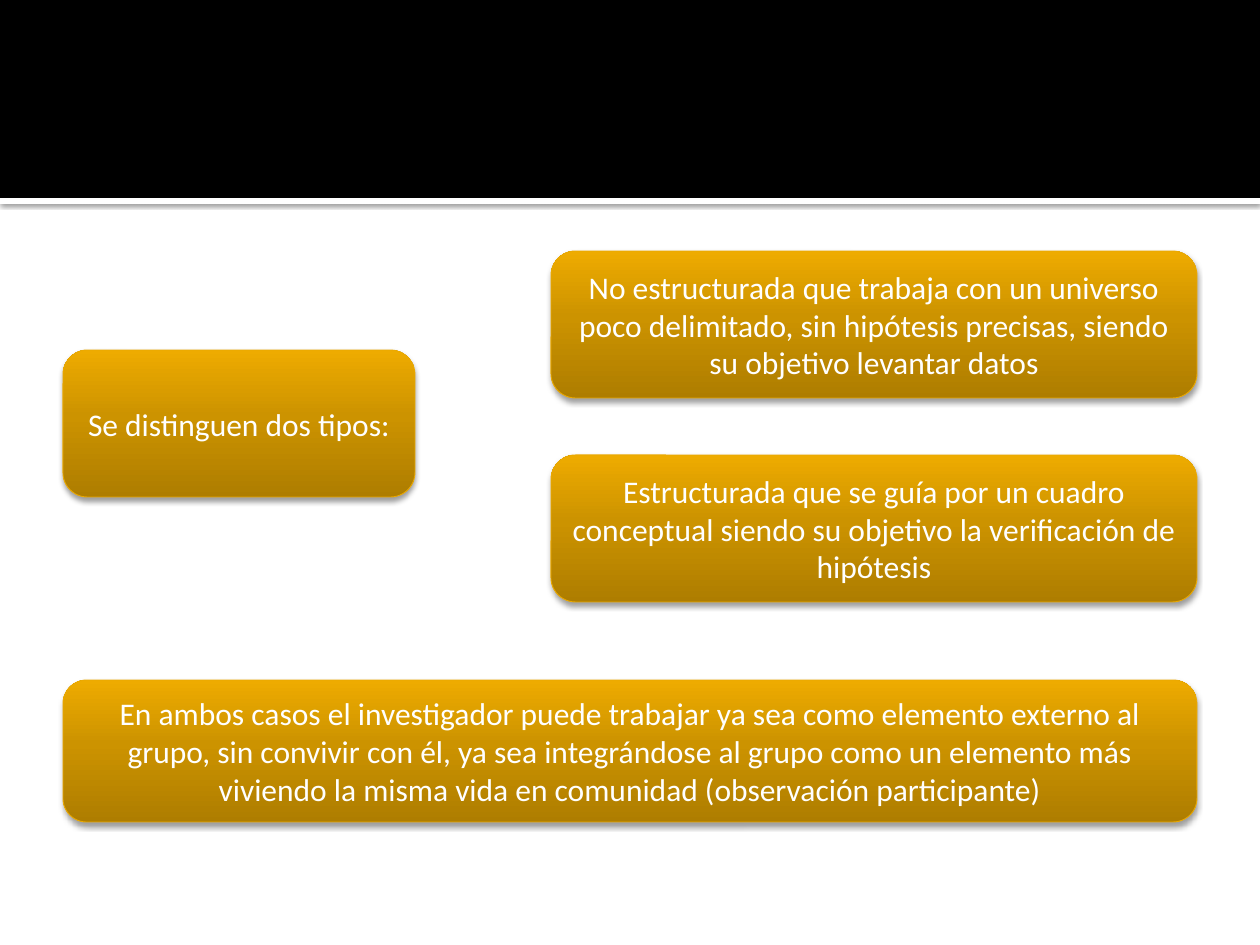
"""Build a slide on the two types of observation."""
from copy import deepcopy
from dataclasses import dataclass

from lxml import etree
from pptx import Presentation
from pptx.dml.color import RGBColor
from pptx.enum.shapes import MSO_SHAPE
from pptx.enum.text import MSO_ANCHOR, PP_ALIGN
from pptx.oxml.ns import qn
from pptx.util import Pt

RECT, ROUNDED = MSO_SHAPE.RECTANGLE, MSO_SHAPE.ROUNDED_RECTANGLE
CENTER, MIDDLE = PP_ALIGN.CENTER, MSO_ANCHOR.MIDDLE
PX = 914400 / 126
BLANK_LAYOUT = 6


@dataclass(frozen=True)
class Theme:
    font: str = "Calibri"
    size: int = 18
    white: str = "FFFFFF"
    black: str = "000000"
    border: str = "EBA900"
    border_width: float = 0.5
    gradient: tuple = ((0, "AE7D00"), (0.55, "CC9300"), (1, "EEAB00"))
    band_shadow: tuple = (60, 2.5, 0.8)
    card_shadow: tuple = (38, 3.1, 2)


THEME = Theme()
SLIDE_WIDTH, SLIDE_HEIGHT = 1260, 945
HEADER_HEIGHT, RULE_HEIGHT = 198, 6
MARGIN = 63
RIGHT = SLIDE_WIDTH - MARGIN
TYPES_LEFT, TYPES_TOP, TYPES_PITCH = 551, 251, 204
CARD_HEIGHT = 147

INTRO = "Se distinguen dos tipos:"
TYPES = [
    "No estructurada que trabaja con un universo poco delimitado, sin hipótesis precisas, "
    "siendo su objetivo levantar datos",
    "Estructurada que se guía por un cuadro conceptual siendo su objetivo la verificación "
    "de hipótesis",
]
CONCLUSION = (
    "En ambos casos el investigador puede trabajar ya sea como elemento externo al grupo, "
    "sin convivir con él, ya sea integrándose al grupo como un elemento más viviendo la "
    "misma vida en comunidad (observación participante)"
)


def rgb(value):
    return RGBColor.from_string(value)


def add_box(slide, preset, *box):
    shape = slide.shapes.add_shape(preset, *(round(v * PX) for v in box))
    shape.shadow.inherit = False
    return shape


def add_shadow(shape, alpha, blur, distance):
    effects = shape._element.spPr.find(qn("a:effectLst"))
    outer = etree.SubElement(
        effects, qn("a:outerShdw"), blurRad=str(Pt(blur)), dist=str(Pt(distance)),
        dir="5400000", algn="ctr", rotWithShape="0")
    color = etree.SubElement(outer, qn("a:srgbClr"), val=THEME.black)
    etree.SubElement(color, qn("a:alpha"), val=str(alpha * 1000))


def add_band(slide, top, height, color):
    band = add_box(slide, RECT, 0, top, SLIDE_WIDTH, height)
    band.fill.solid()
    band.fill.fore_color.rgb = rgb(color)
    band.line.fill.background()
    return band


def fill_gradient(shape):
    shape.fill.gradient()
    shape.fill.gradient_angle = 90
    stops = shape._element.spPr.find(qn("a:gradFill")).find(qn("a:gsLst"))
    stops.append(deepcopy(stops[0]))
    for stop, (position, color) in zip(shape.fill.gradient_stops, THEME.gradient):
        stop.position = position
        stop.color.rgb = rgb(color)


def add_card(slide, text, *box):
    card = add_box(slide, ROUNDED, *box)
    fill_gradient(card)
    card.line.color.rgb = rgb(THEME.border)
    card.line.width = Pt(THEME.border_width)
    add_shadow(card, *THEME.card_shadow)
    frame = card.text_frame
    frame.word_wrap = True
    frame.vertical_anchor = MIDDLE
    paragraph = frame.paragraphs[0]
    paragraph.text = text
    paragraph.alignment = CENTER
    paragraph.font.name = THEME.font
    paragraph.font.size = Pt(THEME.size)
    paragraph.font.color.rgb = rgb(THEME.white)


def main():
    deck = Presentation()
    deck.slide_width = round(SLIDE_WIDTH * PX)
    deck.slide_height = round(SLIDE_HEIGHT * PX)
    slide = deck.slides.add_slide(deck.slide_layouts[BLANK_LAYOUT])

    rule = add_band(slide, HEADER_HEIGHT, RULE_HEIGHT, THEME.white)
    add_shadow(rule, *THEME.band_shadow)
    add_band(slide, 0, HEADER_HEIGHT, THEME.black)

    add_card(slide, INTRO, MARGIN, 350, 352, CARD_HEIGHT)
    for row, kind in enumerate(TYPES):
        add_card(slide, kind, TYPES_LEFT, TYPES_TOP + row * TYPES_PITCH,
                 RIGHT - TYPES_LEFT, CARD_HEIGHT)
    add_card(slide, CONCLUSION, MARGIN, 680, RIGHT - MARGIN, 142)

    deck.save("out.pptx")


if __name__ == "__main__":
    main()
